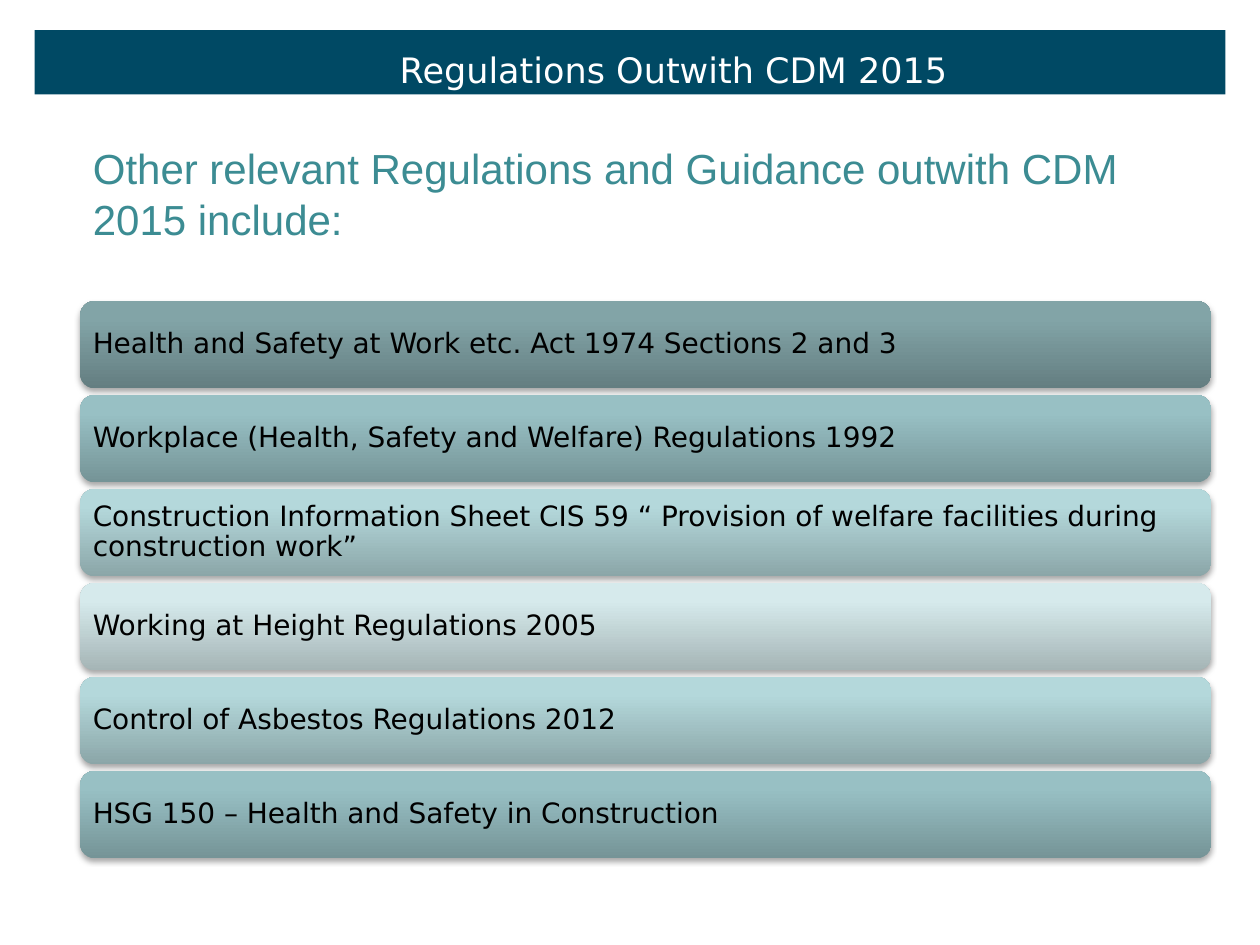
from dataclasses import dataclass

from lxml.etree import SubElement
from pptx import Presentation
from pptx.dml.color import RGBColor
from pptx.enum.shapes import MSO_SHAPE
from pptx.enum.text import MSO_ANCHOR, MSO_AUTO_SIZE, PP_ALIGN
from pptx.oxml.ns import qn
from pptx.util import Pt


@dataclass(frozen=True)
class Theme:
    navy: str = "004964"
    teal: str = "3C8C93"
    white: str = "FFFFFF"
    black: str = "000000"
    sans: str = "DejaVu Sans"
    arial: str = "Arial"
    title: int = 20
    lead: int = 24
    item: int = 16
    # Gradient colours of the bars, bottom to top
    slate: tuple = ("647E81", "82A4A7", "82A6A9")
    mid: tuple = ("759497", "98C0C4", "98C2C5")
    light: tuple = ("8BA6A8", "B4D8DB", "B4D9DC")
    pale: tuple = ("A5B5B6", "D6EAEC", "D6ECEE")


THEME = Theme()
STOPS = (0, 80, 100)

ITEMS = [
    ("Health and Safety at Work etc. Act 1974 Sections 2 and 3", THEME.slate),
    ("Workplace (Health, Safety and Welfare) Regulations 1992", THEME.mid),
    ("Construction Information Sheet CIS 59 “ Provision of welfare "
     "facilities during construction work”", THEME.light),
    ("Working at Height Regulations 2005", THEME.pale),
    ("Control of Asbestos Regulations 2012", THEME.light),
    ("HSG 150 – Health and Safety in Construction", THEME.mid),
]


def apply(obj, form):
    for name, value in form.items():
        setattr(obj, name, value)


def write(shape, text, size, face, tint, frame, para):
    """Put one formatted paragraph into a shape."""
    apply(shape.text_frame, {"word_wrap": True, **frame})
    line = shape.text_frame.paragraphs[0]
    line.text = text
    apply(line, para)
    apply(line.font, {"size": Pt(size), "name": face})
    line.font.color.rgb = RGBColor.from_string(tint)


def add_tint(node, tag, tint):
    return SubElement(node, qn(tag), val=tint)


def shade(shape, tints):
    """Three-stop gradient from bottom to top."""
    shape.fill.gradient()
    shape.fill.gradient_angle = 90
    stops = shape.element.spPr.find(".//" + qn("a:gsLst"))
    for stop in list(stops):
        stops.remove(stop)
    for pos, tint in zip(STOPS, tints):
        stop = SubElement(stops, qn("a:gs"), pos=str(pos * 1000))
        add_tint(stop, "a:srgbClr", tint)


def drop(shape):
    """Soft shadow straight below the shape."""
    shape.shadow.inherit = False
    effect = shape.element.spPr.find(qn("a:effectLst"))
    outer = SubElement(effect, qn("a:outerShdw"), blurRad=str(Pt(3.1)),
                       dist=str(Pt(1.8)), dir="5400000", rotWithShape="0")
    tint = add_tint(outer, "a:srgbClr", THEME.black)
    add_tint(tint, "a:alpha", "35000")


def add_head(slide, text):
    """Title on its dark band."""
    band = slide.shapes.add_shape(MSO_SHAPE.RECTANGLE, Pt(19.8), Pt(17.2),
                                  Pt(680.4), Pt(36.8))
    band.shadow.inherit = False
    band.fill.solid()
    band.fill.fore_color.rgb = RGBColor.from_string(THEME.navy)
    band.line.fill.background()
    title = slide.shapes.title
    title.element.addprevious(band.element)
    apply(title, {"left": Pt(67.5), "top": Pt(10.8),
                  "width": Pt(635), "height": Pt(44)})
    write(title, text, THEME.title, THEME.sans, THEME.white,
          {"vertical_anchor": MSO_ANCHOR.BOTTOM,
           "auto_size": MSO_AUTO_SIZE.NONE},
          {"alignment": PP_ALIGN.CENTER, "line_spacing": 0.75})


def add_lead(slide, text):
    box = slide.shapes.add_textbox(Pt(46), Pt(78), Pt(631.4), Pt(65.4))
    write(box, text, THEME.lead, THEME.arial, THEME.teal, {}, {})


def add_bar(slide, top, text, tints):
    bar = slide.shapes.add_shape(MSO_SHAPE.ROUNDED_RECTANGLE, Pt(45.8),
                                 Pt(top), Pt(646.4), Pt(50))
    bar.line.fill.background()
    shade(bar, tints)
    drop(bar)
    sides = ("left", "right", "top", "bottom")
    inset = {f"margin_{side}": Pt(4.8) for side in sides}
    write(bar, text, THEME.item, THEME.sans, THEME.black,
          {"vertical_anchor": MSO_ANCHOR.MIDDLE, **inset},
          {"alignment": PP_ALIGN.LEFT, "line_spacing": 0.9})


def main():
    deck = Presentation()
    apply(deck, {"slide_width": Pt(720), "slide_height": Pt(540)})
    slide = deck.slides.add_slide(deck.slide_layouts[5])
    add_head(slide, "Regulations Outwith CDM 2015")
    # Stack of bars at an even pitch
    for row, (text, tints) in enumerate(ITEMS):
        add_bar(slide, 172 + row * 53.7, text, tints)
    add_lead(slide, "Other relevant Regulations and Guidance outwith "
                    "CDM 2015 include:")
    deck.save("out.pptx")


if __name__ == "__main__":
    main()
